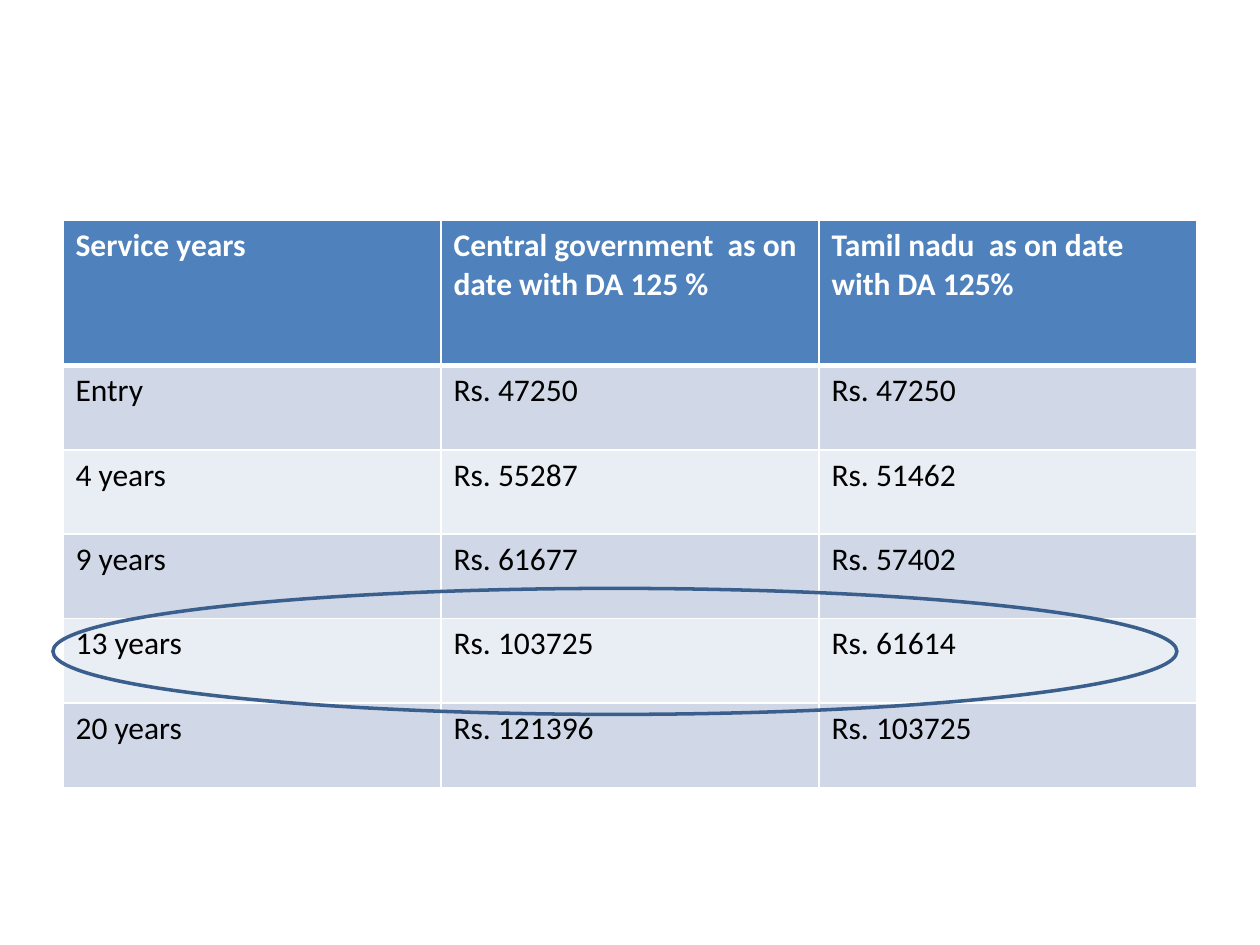
from pptx import Presentation
from pptx.dml.color import RGBColor
from pptx.enum.shapes import MSO_SHAPE
from pptx.oxml import parse_xml
from pptx.oxml.ns import nsdecls
from pptx.util import Inches, Pt

OVAL = MSO_SHAPE.OVAL

HEADER_FILL = "4F81BD"
BAND_FILLS = ["D0D8E8", "E9EDF4"]
WHITE = "FFFFFF"

ROWS = [
    ["Service years", "Central government  as on date with DA 125 %", "Tamil nadu  as on date with DA 125%"],
    ["Entry", "Rs. 47250", "Rs. 47250"],
    ["4 years", "Rs. 55287", "Rs. 51462"],
    ["9 years", "Rs. 61677", "Rs. 57402"],
    ["13 years", "Rs. 103725", "Rs. 61614"],
    ["20 years", "Rs. 121396", "Rs. 103725"],
]


def color(hex_string):
    return RGBColor.from_string(hex_string)


def set_borders(cell, widths):
    """Put white borders on a cell, ahead of its fill; widths are in points."""
    properties = cell._tc.get_or_add_tcPr()
    for position, (side, width) in enumerate(widths.items()):
        properties.insert(position, parse_xml(
            f'<a:ln{side} {nsdecls("a")} w="{Pt(width)}"><a:solidFill>'
            f'<a:srgbClr val="{WHITE}"/></a:solidFill></a:ln{side}>'))


presentation = Presentation()
presentation.slide_width = Inches(10)
presentation.slide_height = Inches(7.5)
slide = presentation.slides.add_slide(presentation.slide_layouts[6])

# Pay table
table = slide.shapes.add_table(
    len(ROWS), len(ROWS[0]), Inches(0.5), Inches(1.75), Inches(9), Inches(4.5)).table
for column in table.columns:
    column.width = Inches(3)

for row_index, texts in enumerate(ROWS):
    is_header = row_index == 0
    table.rows[row_index].height = Inches(1.15 if is_header else 0.67)
    fill = HEADER_FILL if is_header else BAND_FILLS[(row_index - 1) % 2]
    font_format = {"name": "Calibri", "size": Pt(18), "bold": is_header}
    # The rule under the header is thicker than the others
    widths = {"L": 1, "R": 1, "T": 3 if row_index == 1 else 1, "B": 3 if is_header else 1}
    for column_index, text in enumerate(texts):
        cell = table.cell(row_index, column_index)
        cell.fill.solid()
        cell.fill.fore_color.rgb = color(fill)
        set_borders(cell, widths)
        run = cell.text_frame.paragraphs[0].add_run()
        run.text = text
        for attribute, value in font_format.items():
            setattr(run.font, attribute, value)
        run.font.color.rgb = color(WHITE if is_header else "000000")

# Ellipse around the 13 years row
ellipse = slide.shapes.add_shape(OVAL, Inches(0.42), Inches(4.67), Inches(8.92), Inches(1))
ellipse.shadow.inherit = False
ellipse.fill.background()
ellipse.line.color.rgb = color("3A5F8C")
ellipse.line.width = Pt(2)

presentation.save("out.pptx")
